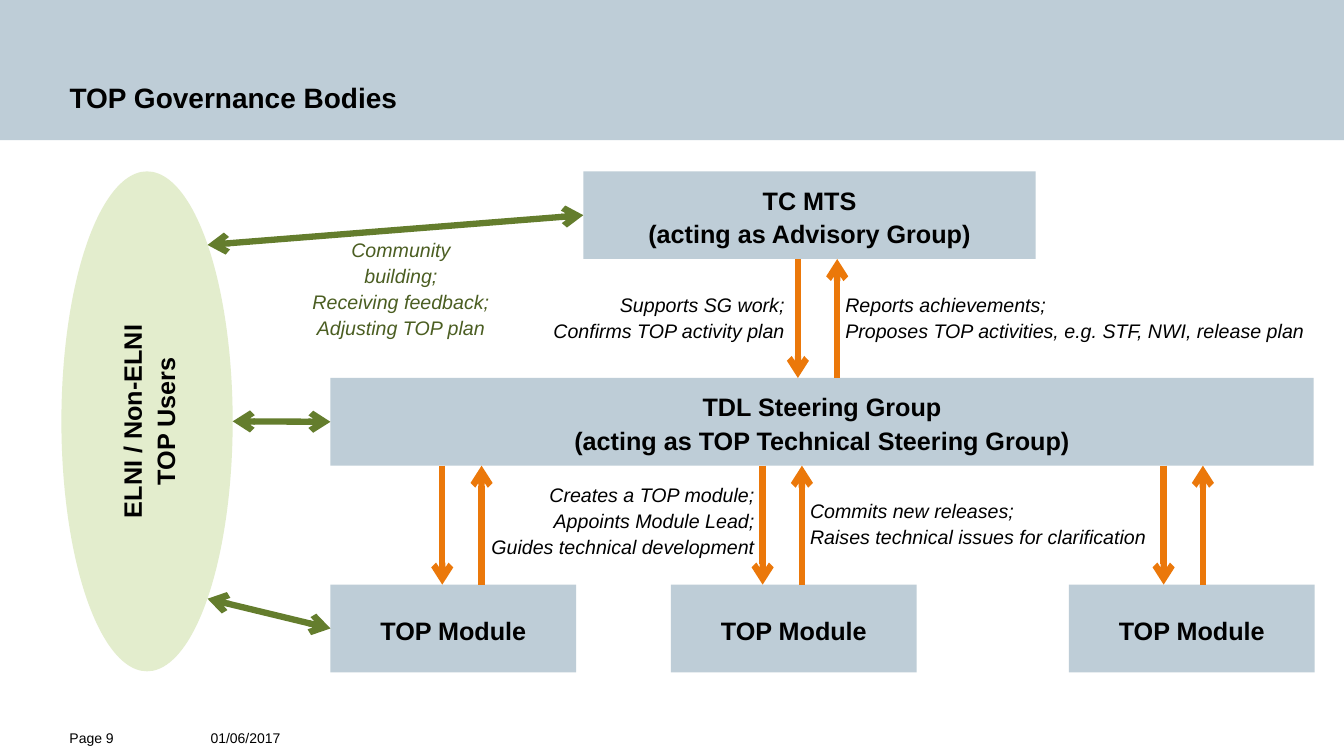
from lxml import etree
from pptx import Presentation
from pptx import util as u
from pptx.dml.color import RGBColor
from pptx.enum import shapes, text
from pptx.oxml import ns

COLORS = {"band": "BECDD7", "users": "E3EDCD", "black": "000000",
          "orange": "EB780A", "green": "647D2D", "dark_green": "4B5E22"}
W, H = 13.34, 7.5
LEFT, CENTER, RIGHT = text.PP_ALIGN.LEFT, text.PP_ALIGN.CENTER, text.PP_ALIGN.RIGHT
TOP, MIDDLE, BOTTOM = text.MSO_ANCHOR.TOP, text.MSO_ANCHOR.MIDDLE, text.MSO_ANCHOR.BOTTOM

# Three rows of boxes at an equal pitch, with arrows in the gaps between them
BOX_H, PITCH = 0.87, 2.05
ROWS = [1.7 + PITCH * i for i in range(3)]
BOX_X, MODULE_W, ARROW_GAP = 3.28, 2.44, 0.39


def write(sp, words, size, color="black", align=LEFT, anchor=TOP, insets=(0, 0, 0, 0),
          spacing=1.1, wrap=True, bold=False, italic=False):
    tf = sp.text_frame
    tf.text = words
    tf.auto_size = text.MSO_AUTO_SIZE.NONE
    tf.word_wrap, tf.vertical_anchor = wrap, anchor
    tf.margin_left, tf.margin_top, tf.margin_right, tf.margin_bottom = map(u.Inches, insets)
    for p in tf.paragraphs:
        p.alignment, p.line_spacing = align, spacing
        for r in p.runs:
            f = r.font
            f.name, f.size, f.bold, f.italic = "Arial", u.Pt(size), bold, italic
            f.color.rgb = RGBColor.from_string(COLORS[color])


def arrow(x1, y1, x2, y2, color, ends):
    cx = s.shapes.add_connector(shapes.MSO_CONNECTOR.STRAIGHT, *map(u.Inches, (x1, y1, x2, y2)))
    cx.line.color.rgb = RGBColor.from_string(COLORS[color])
    cx.line.width = u.Pt(4.5)
    ln = cx.line._get_or_add_ln()
    for end in ends:
        etree.SubElement(ln, ns.qn("a:" + end), type="arrow")
    etree.SubElement(cx._element.spPr, ns.qn("a:effectLst"))


prs = Presentation()
prs.slide_width, prs.slide_height = u.Inches(W), u.Inches(H)
s = prs.slides.add_slide(prs.slide_layouts[5])

# Title band
title = s.shapes.title
title.left, title.top, title.width, title.height = map(u.Inches, (0, 0, W, 1.39))
title.fill.solid()
title.fill.fore_color.rgb = RGBColor.from_string(COLORS["band"])
write(title, "TOP Governance Bodies", 20, anchor=BOTTOM, insets=(0.69, 0.43, 2.32, 0.26),
      spacing=1.0, bold=True)

# Footer
for words, x, w in [("01/06/2017", 2.09, 2.21), ("Page 9", 0.69, 1.24)]:
    write(s.shapes.add_textbox(*map(u.Inches, (x, 7.22, w, 0.28))), words, 10)

# Governance bodies, and the users' ellipse turned to read upwards
RECT, OVAL = shapes.MSO_SHAPE.RECTANGLE, shapes.MSO_SHAPE.OVAL
bodies = [
    (RECT, 5.79, ROWS[0], 4.49, BOX_H, 0, "band", "TC MTS\v(acting as Advisory Group)"),
    (RECT, BOX_X, ROWS[1], 9.76, BOX_H, 0, "band",
     "TDL Steering Group\v(acting as TOP Technical Steering Group)"),
    *[(RECT, x, ROWS[2], MODULE_W, BOX_H, 0, "band", "TOP Module")
      for x in (BOX_X, 6.66, 10.61)],
    (OVAL, -1.02, 3.33, 4.96, 1.7, 270, "users", "ELNI / Non-ELNI\vTOP Users"),
]
for kind, x, y, w, h, turn, fill, words in bodies:
    sp = s.shapes.add_shape(kind, *map(u.Inches, (x, y, w, h)))
    sp.shadow.inherit = False
    sp.rotation = turn
    sp.fill.solid()
    sp.fill.fore_color.rgb = RGBColor.from_string(COLORS[fill])
    sp.line.fill.background()
    write(sp, words, 18, align=CENTER, anchor=MIDDLE, insets=(0.12, 0.06, 0.12, 0.06), bold=True)

# Down and up arrows between neighbouring rows
for row, x in [(0, 7.92), (1, 4.39), (1, 7.57), (1, 11.55)]:
    upper, lower = ROWS[row] + BOX_H, ROWS[row + 1]
    arrow(x, upper, x, lower, "orange", ["tailEnd"])
    arrow(x + ARROW_GAP, lower, x + ARROW_GAP, upper, "orange", ["tailEnd"])

# Two-way arrows between the users and each row
for row, x1, y1, x2 in [(0, 2.06, 2.43, 5.79), (1, 2.31, 4.18, BOX_X), (2, 2.06, 5.94, BOX_X)]:
    arrow(x1, y1, x2, ROWS[row] + BOX_H / 2, "green", ["headEnd", "tailEnd"])

# Arrow labels
labels = [
    (5.48, 2.88, 2.31, 0.5, RIGHT, "black", "Supports SG work;\vConfirms TOP activity plan"),
    (8.39, 2.88, 4.58, 0.52, LEFT, "black",
     "Reports achievements;\nProposes TOP activities, e.g. STF, NWI, release plan"),
    (4.87, 4.77, 2.62, 0.78, RIGHT, "black",
     "Creates a TOP module;\vAppoints Module Lead;\nGuides technical development"),
    (8.04, 4.93, 3.35, 0.52, LEFT, "black",
     "Commits new releases;\vRaises technical issues for clarification"),
    (3.1, 2.34, 1.76, 1.04, CENTER, "dark_green",
     "Community\vbuilding;\nReceiving feedback;\nAdjusting TOP plan"),
]
for x, y, w, h, align, color, words in labels:
    write(s.shapes.add_textbox(*map(u.Inches, (x, y, w, h))), words, 14, color, align,
          wrap=False, italic=True)

prs.save("out.pptx")
